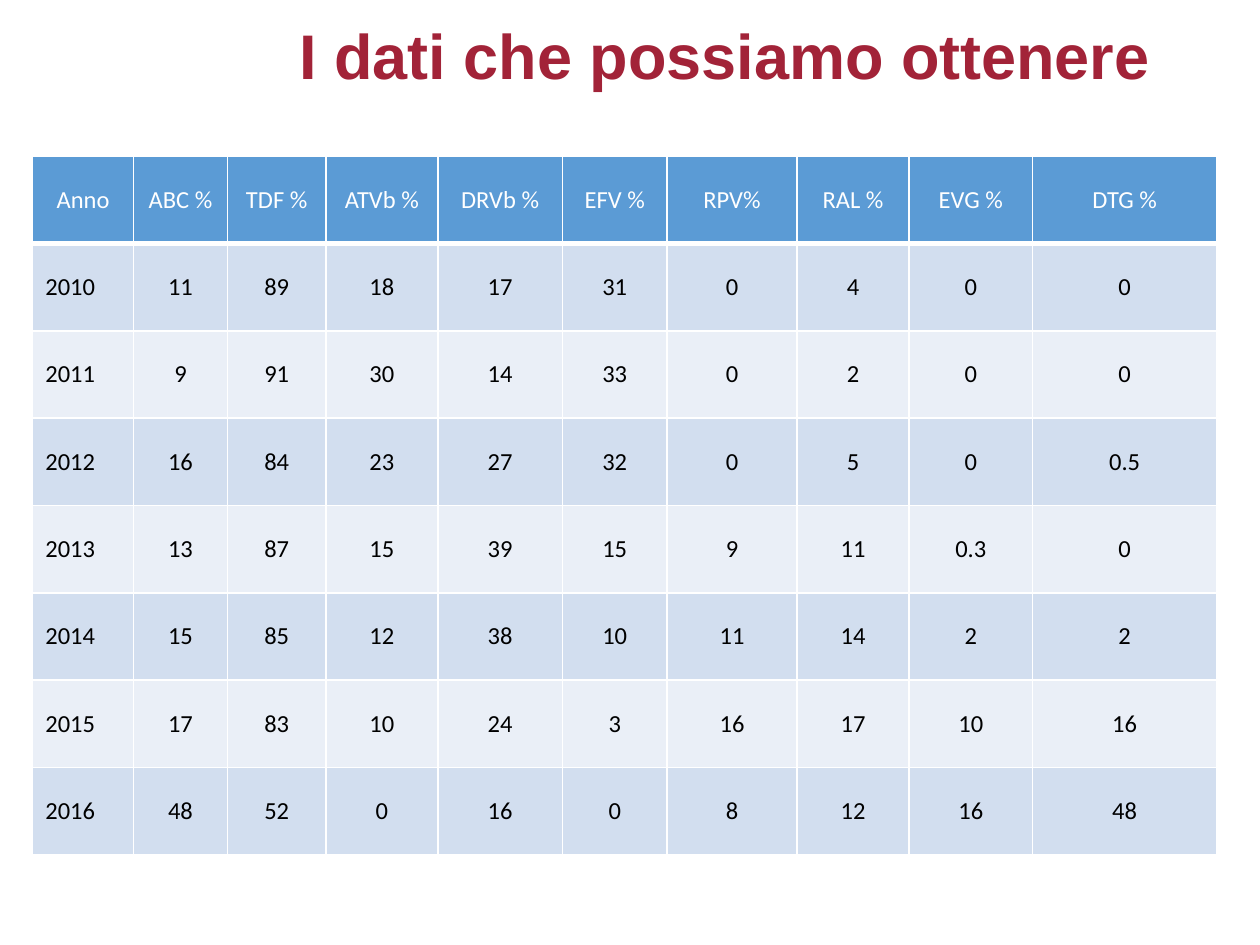
import lxml.etree
import pptx
import pptx.dml.color
import pptx.enum.text
import pptx.oxml.ns
import pptx.util

Cm = pptx.util.Cm
Pt = pptx.util.Pt
ALIGN = pptx.enum.text.PP_ALIGN
ANCHOR = pptx.enum.text.MSO_ANCHOR
qn = pptx.oxml.ns.qn

COLOURS = {
    "title": "A22338",
    "header": "5B9BD5",
    "odd_row": "D2DEEF",
    "even_row": "EAEFF7",
    "white": "FFFFFF",
    "text": "000000",
}

COLUMN_WIDTHS = [2.03, 1.9, 1.98, 2.26, 2.51, 2.11, 2.62, 2.26, 2.49, 3.71]
ROW_HEIGHT = 1.76
HEADER_BORDERS = {"lnL": 1, "lnR": 1, "lnT": 1, "lnB": 3}

ROWS = [
    ["Anno", "ABC %", "TDF %", "ATVb %", "DRVb %", "EFV %", "RPV%", "RAL %", "EVG %", "DTG %"],
    ["2010", "11", "89", "18", "17", "31", "0", "4", "0", "0"],
    ["2011", "9", "91", "30", "14", "33", "0", "2", "0", "0"],
    ["2012", "16", "84", "23", "27", "32", "0", "5", "0", "0.5"],
    ["2013", "13", "87", "15", "39", "15", "9", "11", "0.3", "0"],
    ["2014", "15", "85", "12", "38", "10", "11", "14", "2", "2"],
    ["2015", "17", "83", "10", "24", "3", "16", "17", "10", "16"],
    ["2016", "48", "52", "0", "16", "0", "8", "12", "16", "48"],
]


def colour(name):
    return pptx.dml.color.RGBColor.from_string(COLOURS[name])


def set_font(paragraph, name, size, colour_name, bold=False):
    font = paragraph.font
    font.name = name
    font.size = Pt(size)
    font.bold = bold
    font.color.rgb = colour(colour_name)


def add_title(page, text):
    box = page.shapes.add_textbox(Cm(5.79), Cm(0.38), Cm(18.9), Cm(2.79))
    frame = box.text_frame
    frame.word_wrap = True
    frame.vertical_anchor = ANCHOR.TOP
    paragraph = frame.paragraphs[0]
    paragraph.text = text
    paragraph.line_spacing = 0.9
    set_font(paragraph, "Arial", 36, "title", bold=True)


def set_borders(cell, widths):
    """Draw white cell borders; they must precede the fill in the cell properties."""
    properties = cell._tc.get_or_add_tcPr()
    for index, (side, width) in enumerate(widths.items()):
        line = lxml.etree.Element(qn(f"a:{side}"), w=str(Pt(width)))
        fill = lxml.etree.SubElement(line, qn("a:solidFill"))
        lxml.etree.SubElement(fill, qn("a:srgbClr"), val=COLOURS["white"])
        properties.insert(index, line)


def fill_cell(cell, text, fill, text_colour, alignment):
    cell.fill.solid()
    cell.fill.fore_color.rgb = colour(fill)
    cell.vertical_anchor = ANCHOR.MIDDLE
    paragraph = cell.text_frame.paragraphs[0]
    paragraph.text = text
    paragraph.alignment = alignment
    set_font(paragraph, "Calibri", 14, text_colour)


def add_data_table(page):
    frame = page.shapes.add_table(
        len(ROWS), len(COLUMN_WIDTHS), Cm(0.66), Cm(3.15),
        Cm(sum(COLUMN_WIDTHS)), Cm(ROW_HEIGHT * len(ROWS)))
    table = frame.table
    for column, width in zip(table.columns, COLUMN_WIDTHS):
        column.width = Cm(width)
    for row_index, values in enumerate(ROWS):
        table.rows[row_index].height = Cm(ROW_HEIGHT)
        is_header = row_index == 0
        band = "odd_row" if row_index % 2 else "even_row"
        for column_index, value in enumerate(values):
            cell = table.cell(row_index, column_index)
            is_year = column_index == 0 and not is_header
            fill_cell(cell, value,
                      "header" if is_header else band,
                      "white" if is_header else "text",
                      ALIGN.LEFT if is_year else ALIGN.CENTER)
            if is_header:
                set_borders(cell, HEADER_BORDERS)


def main():
    deck = pptx.Presentation()
    deck.slide_width = Cm(25.4)
    deck.slide_height = Cm(19.05)
    page = deck.slides.add_slide(deck.slide_layouts[6])
    add_title(page, "I dati che possiamo ottenere")
    add_data_table(page)
    deck.save("out.pptx")


if __name__ == "__main__":
    main()
